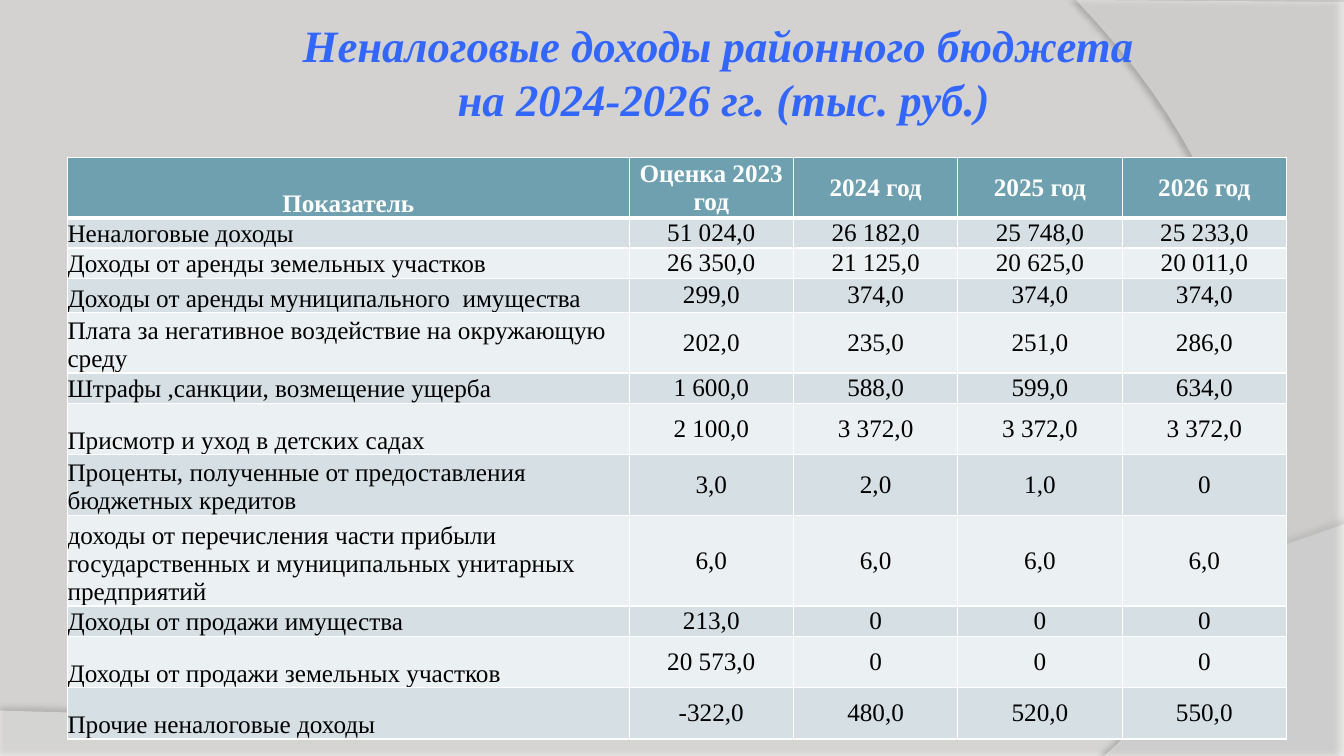
from dataclasses import dataclass

from lxml import etree
from pptx import Presentation
from pptx import util as u
from pptx.dml.color import RGBColor
from pptx.enum import text
from pptx.oxml import ns

FONT = "Times New Roman"
WHITE = "FFFFFF"
HEADER_FILL = "6EA0B0"
BAND_FILLS = ("D5DFE4", "EBF0F2")
SLIDE_W, SLIDE_H = 13.33, 7.5
LABEL_W, YEAR_W = 5.57, 1.63
CURVE_STEPS = 40

Point = tuple[float, float]


@dataclass
class Wave:
    """Background shape: straight outline, then one Bezier curve."""
    outline: list[Point]
    curve: list[Point]
    opacity: int
    shadow_opacity: int
    shadow_distance: float
    shadow_angle: int


@dataclass
class Row:
    height: float
    label: str
    values: tuple[str, ...]


WAVES = [
    Wave([(0, 7.05), (0, 7.51), (13.33, 7.51), (13.33, 5.2)],
         [(7.45, 7.29), (5.21, 7.19), (0, 7.05)], 45, 35, 3.5, 270),
    Wave([(13.33, 0.02), (13.33, 7.5), (10.95, 7.5)],
         [(12.46, 6.19), (13.57, 3), (10.67, 0)], 40, 45, 4, 180),
]

TITLE = ("Неналоговые доходы районного бюджета ", "на 2024-2026 гг. (тыс. руб.)")

ROWS = [
    Row(0.57, "Показатель", ("Оценка 2023 год", "2024 год", "2025 год", "2026 год")),
    Row(0.28, "Неналоговые доходы", ("51 024,0", "26 182,0", "25 748,0", "25 233,0")),
    Row(0.28, "Доходы от аренды земельных участков",
        ("26 350,0", "21 125,0", "20 625,0", "20 011,0")),
    Row(0.34, "Доходы от аренды муниципального  имущества",
        ("299,0", "374,0", "374,0", "374,0")),
    Row(0.57, "Плата за негативное воздействие на окружающую среду",
        ("202,0", "235,0", "251,0", "286,0")),
    Row(0.28, "Штрафы ,санкции, возмещение ущерба",
        ("1 600,0", "588,0", "599,0", "634,0")),
    Row(0.51, "Присмотр и уход в детских садах",
        ("2 100,0", "3 372,0", "3 372,0", "3 372,0")),
    Row(0.57, "Проценты, полученные от предоставления бюджетных кредитов",
        ("3,0", "2,0", "1,0", "0")),
    Row(0.85, "доходы от перечисления части прибыли государственных и "
              "муниципальных унитарных предприятий", ("6,0", "6,0", "6,0", "6,0")),
    Row(0.28, "Доходы от продажи имущества", ("213,0", "0", "0", "0")),
    Row(0.51, "Доходы от продажи земельных участков", ("20 573,0", "0", "0", "0")),
    Row(0.51, "Прочие неналоговые доходы", ("-322,0", "480,0", "520,0", "550,0")),
]


def paint(fill, color: str) -> None:
    fill.solid()
    fill.fore_color.rgb = RGBColor.from_string(color)


def set_attrs(target, values: dict) -> None:
    for name, value in values.items():
        setattr(target, name, value)


def add_xml(parent, tag: str, **attrs):
    return etree.SubElement(parent, ns.qn(tag), {k: str(v) for k, v in attrs.items()})


def write(p, content: str, align, color: str, **font) -> None:
    p.alignment = align
    r = p.add_run()
    r.text = content
    set_attrs(r.font, {"name": FONT, **font})
    r.font.color.rgb = RGBColor.from_string(color)


def bezier(points: list[Point], t: float) -> Point:
    weights = ((1 - t) ** 3, 3 * t * (1 - t) ** 2, 3 * t ** 2 * (1 - t), t ** 3)
    x, y = (sum(w * c for w, c in zip(weights, axis)) for axis in zip(*points))
    return x, y


def draw_wave(s, wave: Wave) -> None:
    control = [wave.outline[-1], *wave.curve]
    points = wave.outline + [bezier(control, i / CURVE_STEPS)
                             for i in range(1, CURVE_STEPS + 1)]
    emu = [(u.Inches(x), u.Inches(y)) for x, y in points]
    builder = s.shapes.build_freeform(*emu[0], scale=1.0)
    builder.add_line_segments(emu[1:], close=True)
    sp = builder.convert_to_shape()
    paint(sp.fill, WHITE)
    sp.line.fill.background()
    sp.shadow.inherit = False
    # Transparency and soft shadow
    fill_color = sp.element.spPr.find(ns.qn("a:solidFill"))[0]
    add_xml(fill_color, "a:alpha", val=wave.opacity * 1000)
    effects = sp.element.spPr.find(ns.qn("a:effectLst"))
    shadow = add_xml(effects, "a:outerShdw", blurRad=u.Pt(4),
                     dist=u.Pt(wave.shadow_distance), dir=wave.shadow_angle * 60000,
                     algn="ctr", rotWithShape=0)
    shadow_color = add_xml(shadow, "a:srgbClr", val="000000")
    add_xml(shadow_color, "a:alpha", val=wave.shadow_opacity * 1000)


def draw_title(s) -> None:
    title = s.shapes.title
    set_attrs(title, {"left": u.Inches(2.89), "top": u.Inches(0.13),
                      "width": u.Inches(8.58), "height": u.Inches(1.18)})
    tf = title.text_frame
    set_attrs(tf, {"word_wrap": True, "vertical_anchor": text.MSO_ANCHOR.TOP,
                   "auto_size": text.MSO_AUTO_SIZE.SHAPE_TO_FIT_TEXT})
    for i, line in enumerate(TITLE):
        p = tf.add_paragraph() if i else tf.paragraphs[0]
        write(p, line, text.PP_ALIGN.CENTER, "3366FF",
              size=u.Pt(32), bold=True, italic=True)
    # Bring the title in front of the waves
    title.element.getparent().append(title.element)


def set_borders(cell, row_index: int) -> None:
    widths = {"L": 1, "R": 1, "T": 3 if row_index == 1 else 1,
              "B": 3 if row_index == 0 else 1}
    tc_pr = cell._tc.get_or_add_tcPr()
    for i, (side, width) in enumerate(widths.items()):
        ln = add_xml(tc_pr, f"a:ln{side}", w=u.Pt(width))
        add_xml(add_xml(ln, "a:solidFill"), "a:srgbClr", val=WHITE)
        tc_pr.insert(i, ln)


def draw_table(s) -> None:
    columns = [LABEL_W] + [YEAR_W] * 4
    table = s.shapes.add_table(
        len(ROWS), len(columns), u.Inches(0.67), u.Inches(1.56),
        u.Inches(sum(columns)), u.Inches(sum(row.height for row in ROWS))).table
    for column, width in zip(table.columns, columns):
        column.width = u.Inches(width)
    for i, row in enumerate(ROWS):
        table.rows[i].height = u.Inches(row.height)
        header = i == 0
        for j, content in enumerate((row.label, *row.values)):
            cell = table.cell(i, j)
            anchor = text.MSO_ANCHOR.MIDDLE if j else text.MSO_ANCHOR.BOTTOM
            set_attrs(cell, {"margin_left": 0, "margin_right": 0, "margin_top": 0,
                             "margin_bottom": 0, "vertical_anchor": anchor})
            paint(cell.fill, HEADER_FILL if header else BAND_FILLS[(i - 1) % 2])
            set_borders(cell, i)
            align = text.PP_ALIGN.CENTER if header or j else text.PP_ALIGN.LEFT
            write(cell.text_frame.paragraphs[0], content, align,
                  WHITE if header else "000000", size=u.Pt(18), bold=header)


def main() -> None:
    prs = Presentation()
    prs.slide_width, prs.slide_height = u.Inches(SLIDE_W), u.Inches(SLIDE_H)
    s = prs.slides.add_slide(prs.slide_layouts.get_by_name("Title Only"))
    paint(s.background.fill, "D4D2D0")
    for wave in WAVES:
        draw_wave(s, wave)
    draw_title(s)
    draw_table(s)
    prs.save("out.pptx")


if __name__ == "__main__":
    main()
